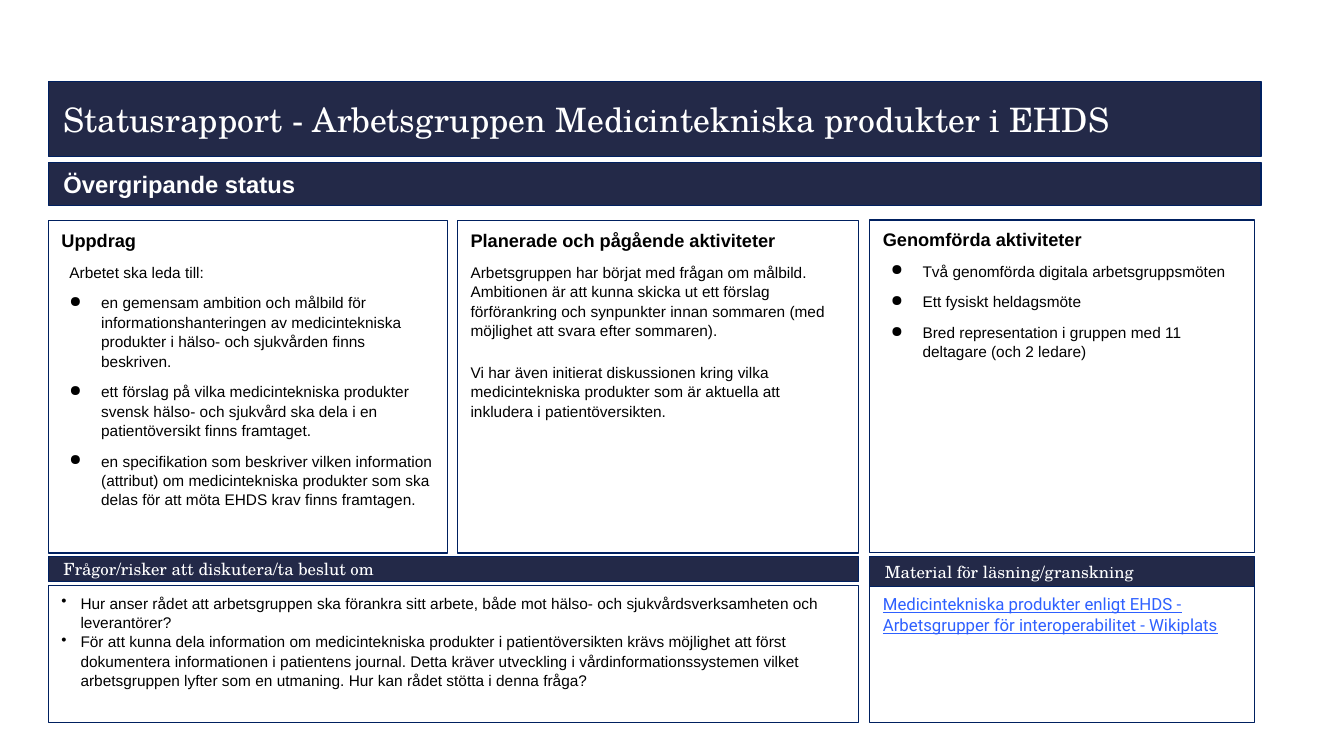
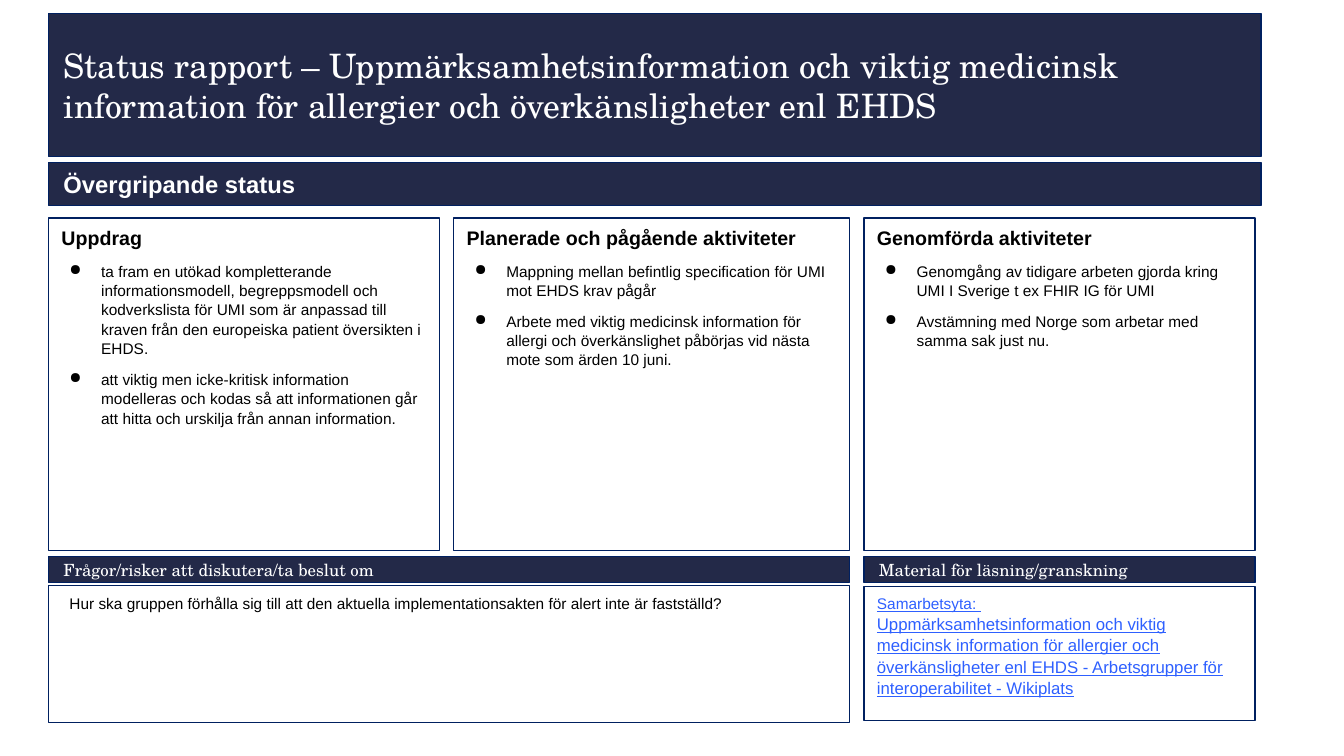
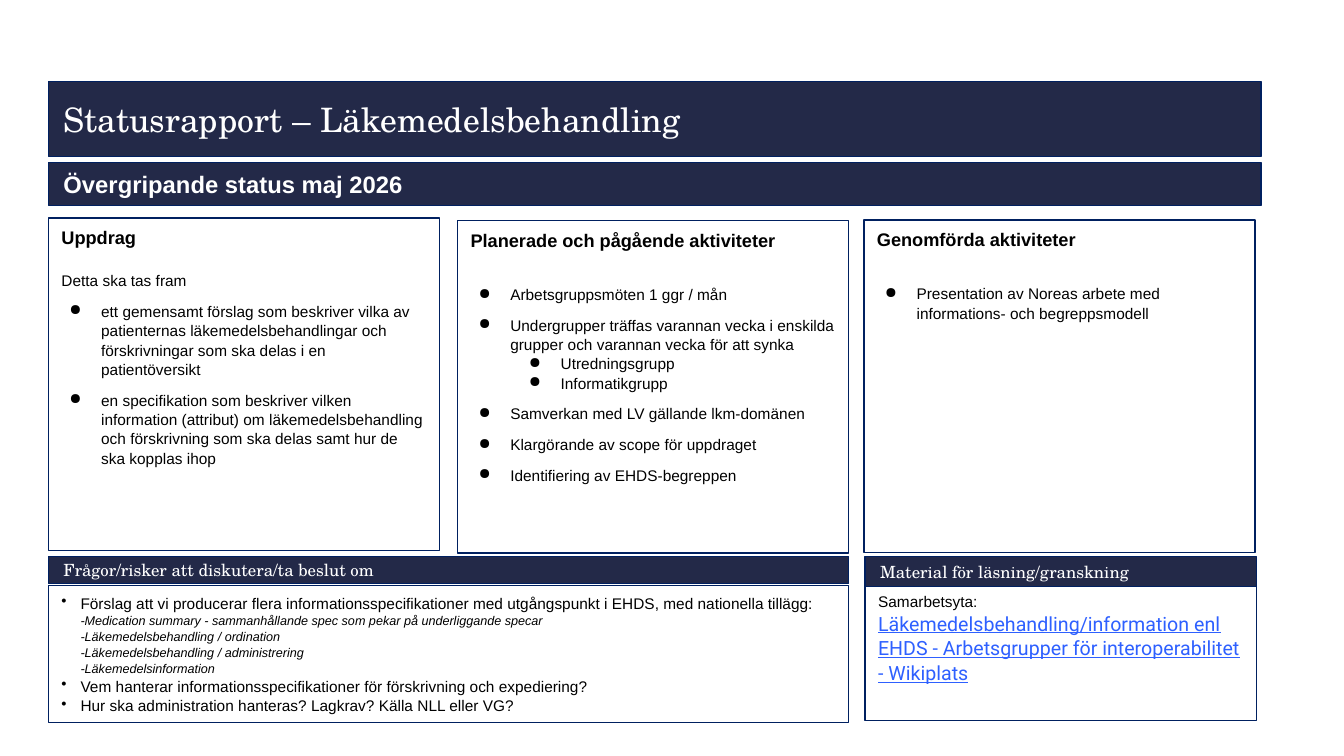
from dataclasses import dataclass, replace

from pptx import Presentation
from pptx import util as u
from pptx.dml import color as dml
from pptx.enum import shapes, text
from pptx.oxml import ns
from lxml import etree


@dataclass(frozen=True)
class Theme:
    navy: str = "232948"
    outline: str = "002060"
    white: str = "FFFFFF"
    black: str = "000000"
    link: str = "2E60FF"
    serif: str = "TeX Gyre Schola"
    sans: str = "Arial"
    link_font: str = "Roboto"
    title_size: int = 24
    status_size: int = 17
    band_size: int = 12
    heading_size: int = 13
    large_heading_size: int = 14
    body_size: int = 11
    detail_size: int = 9
    link_size: int = 12
    large_link_size: int = 14
    line_spacing: float = 1.05


THEME = Theme()


@dataclass(frozen=True)
class TextStyle:
    size: int = THEME.body_size
    font: str = THEME.sans
    color: str = THEME.black
    bold: bool = False
    italic: bool = False
    underline: bool = False
    left: float = 0
    hanging: float = 0
    bullet: str = ""
    before: int = 0
    after: int = 0
    spacing: float = THEME.line_spacing


BODY = TextStyle()
SPACED = replace(BODY, before=8, after=8)
INTRO = replace(BODY, left=0.2, before=8)
BULLET = replace(BODY, left=1, hanging=0.8, bullet="●", before=8)
SUB_BULLET = replace(BULLET, left=2.27, before=0)
QUESTION = replace(BODY, left=0.48, hanging=0.48, bullet="•")
OPEN_QUESTION = replace(BODY, left=0.2)
DETAIL = replace(BODY, size=THEME.detail_size, italic=True, left=0.48)
HEADING = replace(BODY, size=THEME.heading_size, bold=True)
LARGE_HEADING = replace(HEADING, size=THEME.large_heading_size)
AIRY_HEADING = replace(HEADING, after=16)
LINK_LABEL = replace(BODY, color=THEME.link, underline=True)
LINK = replace(LINK_LABEL, size=THEME.link_size)
ROBOTO_LINK = replace(LINK, font=THEME.link_font)
LARGE_LINK = replace(ROBOTO_LINK, size=THEME.large_link_size)
BAND = TextStyle(THEME.band_size, THEME.serif, THEME.white, spacing=1)
TITLE = replace(BAND, size=THEME.title_size)
STATUS = replace(BAND, size=THEME.status_size, font=THEME.sans, bold=True)

LEFT = 1.22
FULL_WIDTH = 30.56
TITLE_BOTTOM = 3.94
STATUS_TOP = 4.09
COLUMN_HEIGHT = 8.38
BAND_TOP = 14.02
HEADINGS = ("Uppdrag", "Planerade och pågående aktiviteter", "Genomförda aktiviteter")


class Report:
    """Builds status report slides in one shared style."""

    def __init__(self):
        self.presentation = Presentation()
        self.presentation.slide_width = u.Cm(33.87)
        self.presentation.slide_height = u.Cm(19.05)
        self.slide = None

    def start(self, title, status, title_height=1.88):
        self.slide = self.presentation.slides.add_slide(self.presentation.slide_layouts[6])
        self.band(title, LEFT, TITLE_BOTTOM - title_height, FULL_WIDTH, title_height, TITLE)
        self.band(status, LEFT, STATUS_TOP, FULL_WIDTH, 1.09, STATUS)

    def box(self, left, top, width, height, fill, inset, anchor):
        shape = self.slide.shapes.add_shape(
            shapes.MSO_SHAPE.RECTANGLE, *map(u.Cm, (left, top, width, height)))
        shape.shadow.inherit = False
        shape.fill.solid()
        shape.fill.fore_color.rgb = dml.RGBColor.from_string(fill)
        shape.line.color.rgb = dml.RGBColor.from_string(THEME.outline)
        shape.line.width = u.Pt(1)
        frame = shape.text_frame
        frame.word_wrap = True
        frame.vertical_anchor = anchor
        frame.margin_left = frame.margin_right = u.Cm(inset[0])
        frame.margin_top = frame.margin_bottom = u.Cm(inset[1])
        return frame

    def band(self, label, left, top, width, height, style=BAND):
        frame = self.box(left, top, width, height, THEME.navy, (0.38, 0.33),
                         text.MSO_ANCHOR.MIDDLE)
        self.add_lines(frame, [(style, label)])

    def panel(self, lines, left, top, width, height):
        frame = self.box(left, top, width, height, THEME.white, (0.33, 0.18),
                         text.MSO_ANCHOR.TOP)
        self.add_lines(frame, lines)

    def columns(self, lefts, widths, tops, heading, contents):
        for label, left, width, top, lines in zip(HEADINGS, lefts, widths, tops, contents):
            self.panel([(heading, label), *lines], left, top, width, COLUMN_HEIGHT)

    def footer(self, questions, material, left_width, right, right_width,
               band_heights, material_top=14.76, material_height=3.45):
        self.panel(questions, LEFT, 14.76, left_width, 3.45)
        self.panel(material, right, material_top, right_width, material_height)
        self.band("Frågor/risker att diskutera/ta beslut om", LEFT, BAND_TOP,
                  left_width, band_heights[0])
        self.band("Material för läsning/granskning", right, BAND_TOP,
                  right_width, band_heights[1])

    def add_lines(self, frame, lines):
        for index, (style, words) in enumerate(lines):
            paragraph = frame.add_paragraph() if index else frame.paragraphs[0]
            paragraph.alignment = text.PP_ALIGN.LEFT
            paragraph.line_spacing = style.spacing
            paragraph.space_before = u.Pt(style.before if index else 0)
            paragraph.space_after = u.Pt(style.after)
            self.indent(paragraph, style)
            run = paragraph.add_run()
            run.text = words
            font = run.font
            font.name = style.font
            font.size = u.Pt(style.size)
            font.bold = style.bold
            font.italic = style.italic
            font.underline = style.underline
            font.color.rgb = dml.RGBColor.from_string(style.color)

    def indent(self, paragraph, style):
        properties = paragraph._p.get_or_add_pPr()
        properties.set("marL", str(u.Cm(style.left)))
        properties.set("indent", str(-u.Cm(style.hanging)))
        if style.bullet:
            bullet_color = etree.SubElement(properties, ns.qn("a:buClr"))
            etree.SubElement(bullet_color, ns.qn("a:srgbClr")).set("val", style.color)
            etree.SubElement(properties, ns.qn("a:buChar")).set("char", style.bullet)


def styled(style, *lines):
    return [(style, line) for line in lines]


def medical_devices(report):
    report.start("Statusrapport - Arbetsgruppen Medicintekniska produkter i EHDS",
                 "Övergripande status")
    mission = styled(INTRO, "Arbetet ska leda till:") + styled(
        BULLET,
        "en gemensam ambition och målbild för informationshanteringen av medicintekniska "
        "produkter i hälso- och sjukvården finns beskriven.",
        "ett förslag på vilka medicintekniska produkter svensk hälso- och sjukvård ska "
        "dela i en patientöversikt finns framtaget.",
        "en specifikation som beskriver vilken information (attribut) om medicintekniska "
        "produkter som ska delas för att möta EHDS krav finns framtagen.")
    planned = styled(
        SPACED,
        "Arbetsgruppen har börjat med frågan om målbild. Ambitionen är att kunna skicka ut "
        "ett förslag förförankring och synpunkter innan sommaren (med möjlighet att svara "
        "efter sommaren).",
        "Vi har även initierat diskussionen kring vilka medicintekniska produkter som är "
        "aktuella att inkludera i patientöversikten.")
    completed = styled(
        BULLET,
        "Två genomförda digitala arbetsgruppsmöten",
        "Ett fysiskt heldagsmöte",
        "Bred representation i gruppen med 11 deltagare (och 2 ledare)")
    report.columns((LEFT, 11.53, 21.92), (10.06, 10.11, 9.7), (5.56, 5.56, 5.54),
                   HEADING, (mission, planned, completed))
    questions = styled(
        QUESTION,
        "Hur anser rådet att arbetsgruppen ska förankra sitt arbete, både mot hälso- och "
        "sjukvårdsverksamheten och leverantörer?",
        "För att kunna dela information om medicintekniska produkter i patientöversikten "
        "krävs möjlighet att först dokumentera informationen i patientens journal. Detta "
        "kräver utveckling i vårdinformationssystemen vilket arbetsgruppen lyfter som en "
        "utmaning. Hur kan rådet stötta i denna fråga?")
    material = styled(ROBOTO_LINK, "Medicintekniska produkter enligt EHDS - Arbetsgrupper "
                                   "för interoperabilitet - Wikiplats")
    report.footer(questions, material, 20.42, 21.92, 9.7, (0.64, 0.76))


def allergies(report):
    report.start("Status rapport – Uppmärksamhetsinformation och viktig medicinsk "
                 "information för allergier och överkänsligheter enl EHDS",
                 "Övergripande status", 3.6)
    mission = styled(
        BULLET,
        "ta fram en utökad kompletterande informationsmodell, begreppsmodell och "
        "kodverkslista för UMI som är anpassad till kraven från den europeiska patient "
        "översikten i EHDS.",
        "att viktig men icke-kritisk information modelleras och kodas så att informationen "
        "går att hitta och urskilja från annan information.")
    planned = styled(
        BULLET,
        "Mappning mellan befintlig specification för UMI mot EHDS krav pågår",
        "Arbete med viktig medicinsk information för allergi och överkänslighet påbörjas "
        "vid nästa mote som ärden 10 juni.")
    completed = styled(
        BULLET,
        "Genomgång av tidigare arbeten gjorda kring UMI I Sverige t ex FHIR IG för UMI",
        "Avstämning med Norge som arbetar med samma sak just nu.")
    report.columns((LEFT, 11.43, 21.77), (9.86, 9.98, 9.86), (5.49, 5.49, 5.49),
                   LARGE_HEADING, (mission, planned, completed))
    questions = styled(OPEN_QUESTION, "Hur ska gruppen förhålla sig till att den aktuella "
                                      "implementationsakten för alert inte är fastställd?")
    material = styled(LINK_LABEL, "Samarbetsyta: ") + styled(
        LINK, "Uppmärksamhetsinformation och viktig medicinsk information för allergier och "
              "överkänsligheter enl EHDS - Arbetsgrupper för interoperabilitet - Wikiplats")
    report.footer(questions, material, 20.19, 21.77, 9.86, (0.66, 0.66), 14.78, 3.38)


def medication(report):
    report.start("Statusrapport – Läkemedelsbehandling", "Övergripande status maj 2026")
    mission = styled(BODY, "Detta ska tas fram") + styled(
        BULLET,
        "ett gemensamt förslag som beskriver vilka av patienternas läkemedelsbehandlingar "
        "och förskrivningar som ska delas i en patientöversikt",
        "en specifikation som beskriver vilken information (attribut) om "
        "läkemedelsbehandling och förskrivning som ska delas samt hur de ska kopplas ihop")
    planned = styled(
        BULLET,
        "Arbetsgruppsmöten 1 ggr / mån",
        "Undergrupper träffas varannan vecka i enskilda grupper och varannan vecka för att "
        "synka")
    planned += styled(SUB_BULLET, "Utredningsgrupp", "Informatikgrupp")
    planned += styled(
        BULLET,
        "Samverkan med LV gällande lkm-domänen",
        "Klargörande av scope för uppdraget",
        "Identifiering av EHDS-begreppen")
    completed = styled(BULLET, "Presentation av Noreas arbete med informations- och "
                               "begreppsmodell")
    report.columns((LEFT, 11.53, 21.77), (9.86, 9.86, 9.86), (5.49, 5.56, 5.54),
                   AIRY_HEADING, (mission, planned, completed))
    questions = styled(QUESTION, "Förslag att vi producerar flera informationsspecifikationer "
                                 "med utgångspunkt i EHDS, med nationella tillägg:")
    questions += styled(
        DETAIL,
        "-Medication summary - sammanhållande spec som pekar på underliggande specar",
        "-Läkemedelsbehandling / ordination",
        "-Läkemedelsbehandling / administrering",
        "-Läkemedelsinformation")
    questions += styled(
        QUESTION,
        "Vem hanterar informationsspecifikationer för förskrivning och expediering?",
        "Hur ska administration hanteras? Lagkrav? Källa NLL eller VG?")
    material = styled(BODY, "Samarbetsyta:") + styled(
        LARGE_LINK, "Läkemedelsbehandling/information enl EHDS - Arbetsgrupper för "
                    "interoperabilitet - Wikiplats")
    report.footer(questions, material, 20.17, 21.8, 9.86, (0.69, 0.76), 14.71)


def main():
    report = Report()
    for build in (medical_devices, allergies, medication):
        build(report)
    report.presentation.save("out.pptx")


if __name__ == "__main__":
    main()
